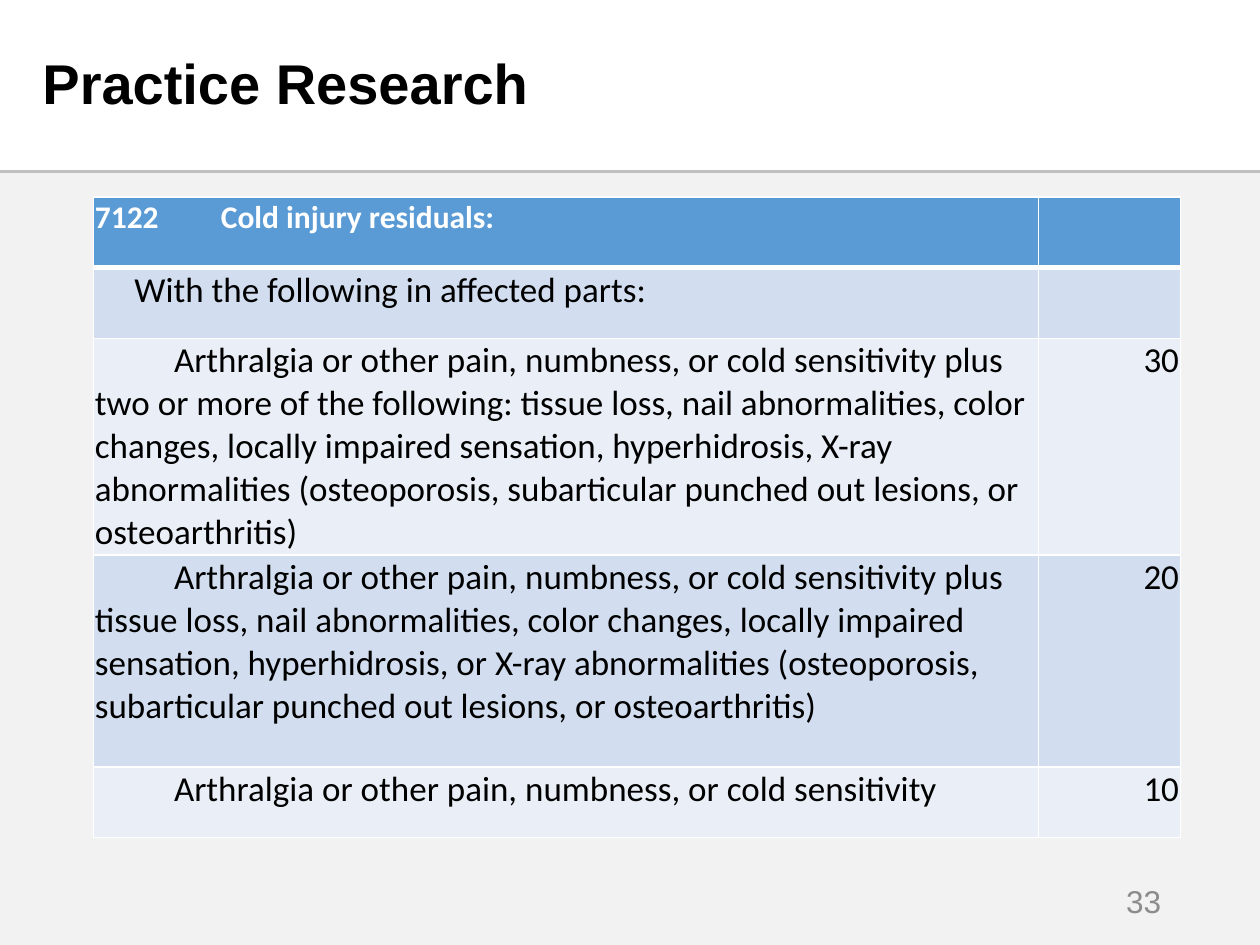
from lxml import etree
from pptx import Presentation
from pptx.dml.color import RGBColor
from pptx.enum.shapes import MSO_CONNECTOR as CONN, MSO_SHAPE as SHAPE
from pptx.enum.text import MSO_ANCHOR as ANCHOR, PP_ALIGN as ALIGN
from pptx.oxml.ns import qn
from pptx.util import Pt

COLORS = {
    "panel": "F2F2F2", "rule": "BFBFBF", "header": "5B9BD5",
    "band_dark": "D2DEEF", "band_light": "EAEFF7",
    "white": "FFFFFF", "black": "000000", "number": "8C8C8C",
}
COL_WIDTHS = [540, 81]
ROW_HEIGHTS = [40.4, 40.4, 121, 121, 40.4]
ROWS = [
    ("7122\tCold injury residuals:", "", 0),
    ("With the following in affected parts:", "", 22.6),
    ("Arthralgia or other pain, numbness, or cold sensitivity plus two or more "
     "of the following: tissue loss, nail abnormalities, color changes, locally "
     "impaired sensation, hyperhidrosis, X-ray abnormalities (osteoporosis, "
     "subarticular punched out lesions, or osteoarthritis)", "30", 45.2),
    ("Arthralgia or other pain, numbness, or cold sensitivity plus tissue loss, "
     "nail abnormalities, color changes, locally impaired sensation, "
     "hyperhidrosis, or X-ray abnormalities (osteoporosis, subarticular punched "
     "out lesions, or osteoarthritis)", "20", 45.2),
    ("Arthralgia or other pain, numbness, or cold sensitivity", "10", 45.2),
]


def rgb(name):
    return RGBColor.from_string(COLORS[name])


def style_runs(p, font, size, color, bold=False):
    for r in p.runs:
        r.font.name, r.font.size, r.font.bold = font, Pt(size), bold
        r.font.color.rgb = rgb(color)


def add_panel(slide, x, y, w, h):
    sp = slide.shapes.add_shape(SHAPE.RECTANGLE, Pt(x), Pt(y), Pt(w), Pt(h))
    sp.shadow.inherit = False
    sp.fill.solid()
    sp.fill.fore_color.rgb = rgb("panel")
    sp.line.fill.background()


def add_rule(slide, y, w):
    line = slide.shapes.add_connector(CONN.STRAIGHT, 0, Pt(y), Pt(w), Pt(y))
    line.line.color.rgb = rgb("rule")
    line.line.width = Pt(1.5)
    etree.SubElement(line._element.spPr, qn("a:effectLst"))


def add_text(slide, text, x, y, w, h, size, color, bold=False,
             align=ALIGN.LEFT, spacing=1.0):
    tf = slide.shapes.add_textbox(Pt(x), Pt(y), Pt(w), Pt(h)).text_frame
    tf.word_wrap = True
    tf.vertical_anchor = ANCHOR.MIDDLE
    p = tf.paragraphs[0]
    p.text, p.alignment, p.line_spacing = text, align, spacing
    style_runs(p, "Arial", size, color, bold)


def set_borders(cell, top, bottom):
    tcPr = cell._tc.get_or_add_tcPr()
    for side, width in zip("LRTB", (1, 1, top, bottom)):
        ln = etree.SubElement(tcPr, qn(f"a:ln{side}"), w=str(Pt(width)))
        fill = etree.SubElement(ln, qn("a:solidFill"))
        etree.SubElement(fill, qn("a:srgbClr"), val=COLORS["white"])


def set_indent(p, indent):
    pPr = p._p.get_or_add_pPr()
    pPr.set("marL", "0")
    pPr.set("indent", str(Pt(indent)))


def set_tab(p, pos):
    tabs = etree.SubElement(p._p.get_or_add_pPr(), qn("a:tabLst"))
    etree.SubElement(tabs, qn("a:tab"), pos=str(Pt(pos)), algn="l")


def fill_cell(cell, text, fill, header):
    cell.fill.solid()
    cell.fill.fore_color.rgb = rgb(fill)
    p = cell.text_frame.paragraphs[0]
    if text:
        cell.margin_left = cell.margin_right = Pt(0.75)
        cell.margin_top = cell.margin_bottom = Pt(0.75)
        p.text = text
        style_runs(p, "Calibri", 18 if header else 20,
                   "white" if header else "black", header)
    return p


def add_rating_table(slide, x, y):
    frame = slide.shapes.add_table(len(ROWS), len(COL_WIDTHS), Pt(x), Pt(y),
                                   Pt(sum(COL_WIDTHS)), Pt(sum(ROW_HEIGHTS)))
    table = frame.table
    for col, width in zip(table.columns, COL_WIDTHS):
        col.width = Pt(width)
    for i, (criterion, rating, indent) in enumerate(ROWS):
        table.rows[i].height = Pt(ROW_HEIGHTS[i])
        header = i == 0
        fill = "header" if header else ("band_light", "band_dark")[i % 2]
        for cell in table.rows[i].cells:
            set_borders(cell, 3 if i == 1 else 1, 3 if header else 1)
        p = fill_cell(table.cell(i, 0), criterion, fill, header)
        set_indent(p, indent)
        if header:
            set_tab(p, 48.5)
        fill_cell(table.cell(i, 1), rating, fill, header).alignment = ALIGN.RIGHT


def main():
    prs = Presentation()
    prs.slide_width, prs.slide_height = Pt(720), Pt(540)
    slide = prs.slides.add_slide(prs.slide_layouts[6])
    add_panel(slide, 0, 98.5, 720, 441.5)
    add_rule(slide, 98, 720)
    add_rating_table(slide, 53.5, 112.5)
    add_text(slide, "33", 508.5, 500.5, 162, 28.8, 18, "number",
             align=ALIGN.RIGHT)
    add_text(slide, "Practice Research", 17.2, 10.8, 499, 77, 32, "black",
             bold=True, spacing=0.9)
    prs.save("out.pptx")


if __name__ == "__main__":
    main()
